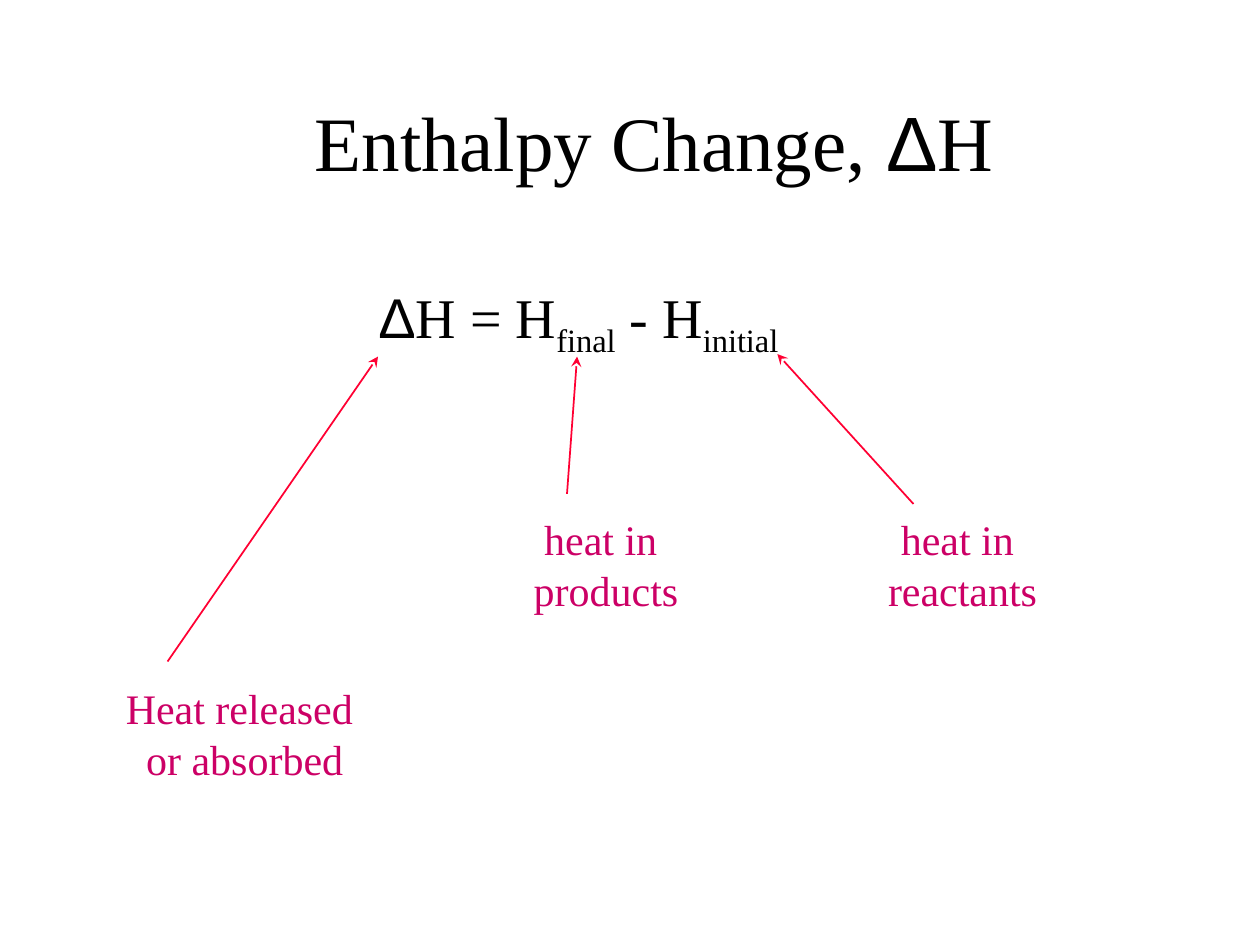
from collections import namedtuple
from dataclasses import dataclass

from lxml import etree
from pptx import Presentation
from pptx import util as u
from pptx.dml.color import RGBColor
from pptx.enum import shapes, text
from pptx.oxml.ns import qn

Box = namedtuple("Box", "left top width height")
Point = namedtuple("Point", "x y")


@dataclass(frozen=True)
class Theme:
    serif: str = "Times New Roman"
    symbol: str = "Arial"
    ink: str = "000000"
    label: str = "CC0066"
    arrow: str = "FF0033"
    paper: str = "FFFFFF"
    title_size: int = 44
    equation_size: int = 32
    label_size: int = 24
    arrow_width: int = 1


THEME = Theme()
COLUMNS, ROWS = 100, 75
CELL = u.Inches(0.1)  # the grid is square


def grid(count):
    """Length of a number of columns or rows."""
    return round(count * CELL)


def add_text(slide, box, lines, size, color, anchor=text.MSO_ANCHOR.TOP, wrap=True):
    """Place centred lines, each a list of (words, font, baseline) runs."""
    shape = slide.shapes.add_textbox(*map(grid, box))
    frame = shape.text_frame
    frame.word_wrap = wrap
    frame.vertical_anchor = anchor
    for index, runs in enumerate(lines):
        paragraph = frame.add_paragraph() if index else frame.paragraphs[0]
        paragraph.alignment = text.PP_ALIGN.CENTER
        for words, font, baseline in runs:
            run = paragraph.add_run()
            run.text = words
            run.font.name = font
            run.font.size = u.Pt(size)
            run.font.color.rgb = RGBColor.from_string(color)
            if baseline:
                run._r.get_or_add_rPr().set("baseline", str(baseline * 1000))


def add_arrow(slide, start, tip):
    connector = slide.shapes.add_connector(
        shapes.MSO_CONNECTOR.STRAIGHT, *map(grid, (*start, *tip)))
    connector.line.color.rgb = RGBColor.from_string(THEME.arrow)
    connector.line.width = u.Pt(THEME.arrow_width)
    properties = connector._element.spPr
    etree.SubElement(properties.find(qn("a:ln")), qn("a:tailEnd"), type="stealth")
    etree.SubElement(properties, qn("a:effectLst"))


def add_title(slide, box):
    runs = [("Enthalpy Change, ", THEME.serif, 0),
            ("Δ", THEME.symbol, 0),
            ("H", THEME.serif, 0)]
    add_text(slide, box, [runs], THEME.title_size, THEME.ink, text.MSO_ANCHOR.MIDDLE)


def add_equation(slide, box):
    runs = [("Δ", THEME.symbol, 0),
            ("H = H", THEME.serif, 0),
            ("final", THEME.serif, -25),
            (" - H", THEME.serif, 0),
            ("initial", THEME.serif, -25)]
    add_text(slide, box, [runs], THEME.equation_size, THEME.ink)


def add_callout(slide, box, lines, offset, tip):
    """Label in its box, with an arrow from an offset off its top left corner."""
    add_text(slide, box, [[(line, THEME.serif, 0)] for line in lines],
             THEME.label_size, THEME.label, wrap=False)
    start = Point(box.left + offset.x, box.top + offset.y)
    add_arrow(slide, start, tip)


def add_enthalpy_slide(presentation):
    slide = presentation.slides.add_slide(presentation.slide_layouts[6])
    slide.background.fill.solid()
    slide.background.fill.fore_color.rgb = RGBColor.from_string(THEME.paper)

    add_title(slide, Box(9.4, 3.1, 85, 16.1))
    add_equation(slide, Box(10.9, 21.9, 70, 19.2))

    # Each term of the equation is explained by one callout
    callouts = [
        (Box(41.3, 40.3, 13.6, 9.1), ("heat in ", "products"),
         Point(3.7, -1.1), Point(45.8, 28.3)),
        (Box(69.4, 40.3, 14, 9.1), ("heat in ", "reactants"),
         Point(3.1, -0.3), Point(61.7, 28.1)),
        (Box(8.9, 53.7, 20.2, 9.1), ("Heat released", " or absorbed"),
         Point(4.4, -1.2), Point(30, 28.3)),
    ]
    for callout in callouts:
        add_callout(slide, *callout)


def main():
    presentation = Presentation()
    presentation.slide_width = grid(COLUMNS)
    presentation.slide_height = grid(ROWS)
    add_enthalpy_slide(presentation)
    presentation.save("out.pptx")


if __name__ == "__main__":
    main()
